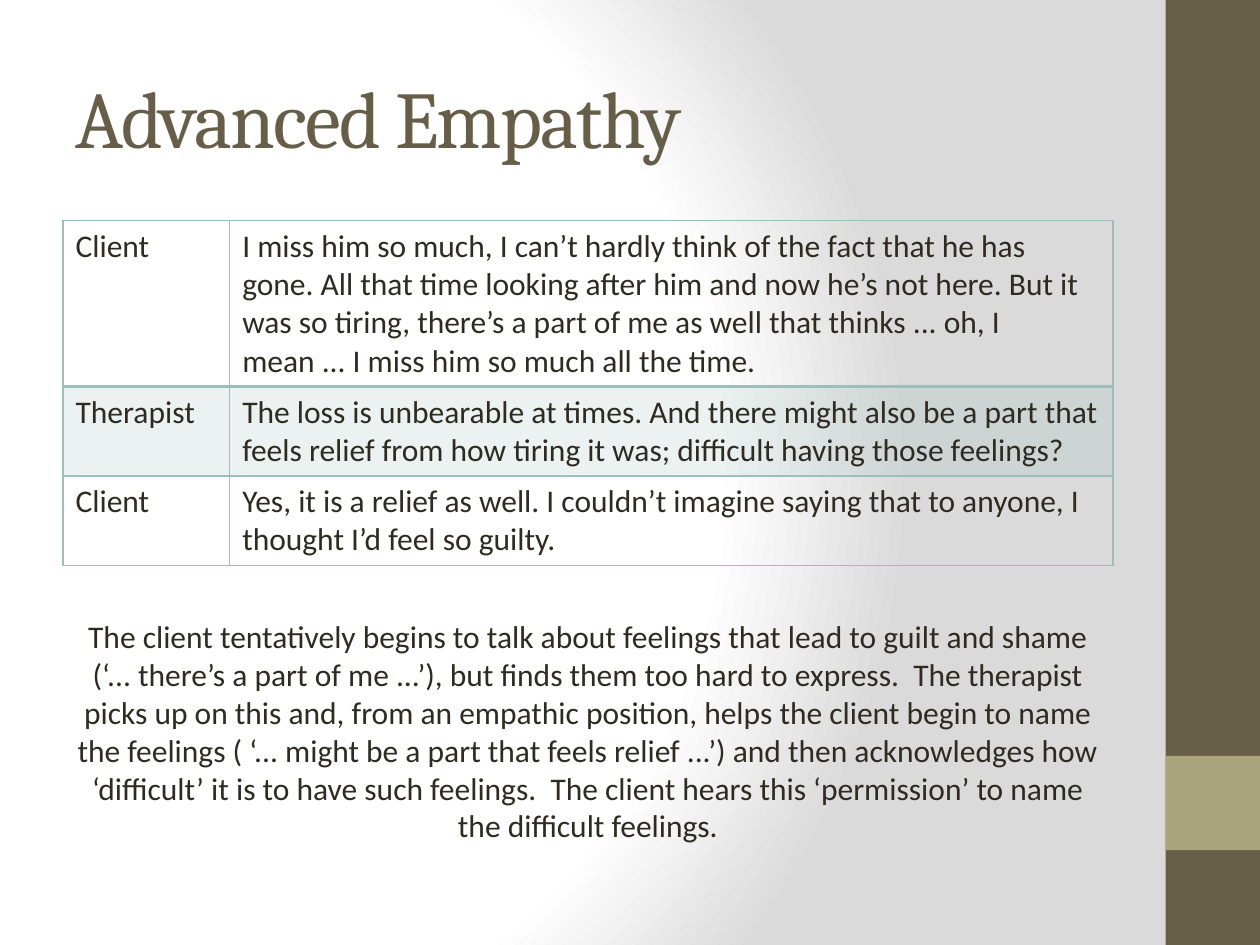
import dataclasses

import lxml.etree
import pptx
import pptx.dml.color
import pptx.enum.shapes
import pptx.enum.text
import pptx.oxml
import pptx.oxml.ns
import pptx.util

Cm = pptx.util.Cm
Pt = pptx.util.Pt
qn = pptx.oxml.ns.qn


@dataclasses.dataclass(frozen=True)
class Theme:
    heading_font: str = "Cambria"
    body_font: str = "Calibri"
    heading_size: int = 46
    body_size: int = 18
    brown: str = "675E47"
    olive: str = "A9A57C"
    ink: str = "2F2B20"
    teal: str = "9CBEBD"
    white: str = "FFFFFF"
    grey: str = "DADADA"


THEME = Theme()
LEFT, CONTENT_WIDTH = Cm(1.27), Cm(21.17)
SPEAKER_WIDTH = Cm(3.36)

DIALOGUE = [
    ("Client", "I miss him so much, I can’t hardly think of the fact that he has gone. "
     "All that time looking after him and now he’s not here. But it was so tiring, "
     "there’s a part of me as well that thinks ... oh, I mean ... "
     "I miss him so much all the time.", Cm(3.35)),
    ("Therapist", "The loss is unbearable at times. And there might also be a part that "
     "feels relief from how tiring it was; difficult having those feelings?", Cm(1.8)),
    ("Client", "Yes, it is a relief as well. I couldn’t imagine saying that to anyone, "
     "I thought I’d feel so guilty.", Cm(1.8)),
]
COMMENTARY = (
    "The client tentatively begins to talk about feelings that lead to guilt and shame "
    "(‘... there’s a part of me ...’), but finds them too hard to express.  The therapist "
    "picks up on this and, from an empathic position, helps the client begin to name the "
    "feelings ( ‘... might be a part that feels relief ...’) and then acknowledges how "
    "‘difficult’ it is to have such feelings.  The client hears this ‘permission’ to name "
    "the difficult feelings."
)


def rgb(color):
    return pptx.dml.color.RGBColor.from_string(color)


def paint_background(slide):
    slide.background.fill.gradient()
    gradient = next(slide.element.iter(qn("a:gradFill")))
    for part in list(gradient):
        gradient.remove(part)
    stops = lxml.etree.SubElement(gradient, qn("a:gsLst"))
    for percent, color in ((0, THEME.white), (75, THEME.white), (100, THEME.grey)):
        stop = lxml.etree.SubElement(stops, qn("a:gs"), pos=str(percent * 1000))
        lxml.etree.SubElement(stop, qn("a:srgbClr"), val=color)
    circle = lxml.etree.SubElement(gradient, qn("a:path"))
    circle.set("path", "circle")
    lxml.etree.SubElement(circle, qn("a:fillToRect"),
                          l="20000", t="50000", r="100000", b="50000")


def add_band(slide, top, height, color):
    band = slide.shapes.add_shape(pptx.enum.shapes.MSO_SHAPE.RECTANGLE,
                                  Cm(23.5), top, Cm(1.9), height)
    band.shadow.inherit = False
    band.fill.solid()
    band.fill.fore_color.rgb = rgb(color)
    band.line.fill.background()


def style_paragraph(paragraph, font, size, color):
    paragraph.font.name = font
    paragraph.font.size = Pt(size)
    paragraph.font.color.rgb = rgb(color)


def add_text(slide, top, height, text, font, size, color):
    box = slide.shapes.add_textbox(LEFT, top, CONTENT_WIDTH, height)
    box.text_frame.word_wrap = True
    box.text_frame.text = text
    style_paragraph(box.text_frame.paragraphs[0], font, size, color)
    return box.text_frame


def add_title(slide, text):
    frame = add_text(slide, Cm(0.76), Cm(3.18), text,
                     THEME.heading_font, THEME.heading_size, THEME.brown)
    frame.vertical_anchor = pptx.enum.text.MSO_ANCHOR.MIDDLE
    frame.paragraphs[0].runs[0].font._element.set("spc", "-100")


def add_commentary(slide, text):
    frame = add_text(slide, Cm(12.32), Cm(5.64), text,
                     THEME.body_font, THEME.body_size, THEME.ink)
    frame.auto_size = pptx.enum.text.MSO_AUTO_SIZE.SHAPE_TO_FIT_TEXT
    frame.paragraphs[0].alignment = pptx.enum.text.PP_ALIGN.CENTER


def tint_cell(cell, percent):
    cell.fill.solid()
    cell.fill.fore_color.rgb = rgb(THEME.teal)
    color = next(cell._tc.tcPr.iter(qn("a:srgbClr")))
    lxml.etree.SubElement(color, qn("a:alpha"), val=str(percent * 1000))


def border_cell(cell, widths):
    for position, (side, width) in enumerate(widths.items()):
        border = pptx.oxml.parse_xml(
            f'<a:ln{side} xmlns:a="{pptx.oxml.ns.nsuri("a")}" w="{Pt(width)}">'
            f'<a:solidFill><a:srgbClr val="{THEME.teal}"/></a:solidFill></a:ln{side}>')
        cell._tc.tcPr.insert(position, border)


def add_dialogue(slide, turns):
    table = slide.shapes.add_table(len(turns), 2, LEFT, Cm(4.45), CONTENT_WIDTH,
                                   sum(height for _, _, height in turns)).table
    table.first_row = table.horz_banding = False
    table.columns[0].width = SPEAKER_WIDTH
    table.columns[1].width = CONTENT_WIDTH - SPEAKER_WIDTH
    for index, (speaker, words, height) in enumerate(turns):
        table.rows[index].height = height
        borders = {"L": 1, "R": 1, "T": 2 if index == 1 else 1, "B": 2 if index == 0 else 1}
        for column, text in enumerate((speaker, words)):
            cell = table.cell(index, column)
            cell.text = text
            style_paragraph(cell.text_frame.paragraphs[0],
                            THEME.body_font, THEME.body_size, THEME.ink)
            if speaker == "Therapist":
                tint_cell(cell, 20)
            else:
                cell.fill.background()
            border_cell(cell, borders)


def main():
    deck = pptx.Presentation()
    deck.slide_width, deck.slide_height = Cm(25.4), Cm(19.05)
    slide = deck.slides.add_slide(deck.slide_layouts[6])
    paint_background(slide)
    add_band(slide, 0, deck.slide_height, THEME.brown)
    add_band(slide, Cm(15.24), Cm(1.9), THEME.olive)
    add_title(slide, "Advanced Empathy")
    add_dialogue(slide, DIALOGUE)
    add_commentary(slide, COMMENTARY)
    deck.save("out.pptx")


if __name__ == "__main__":
    main()
